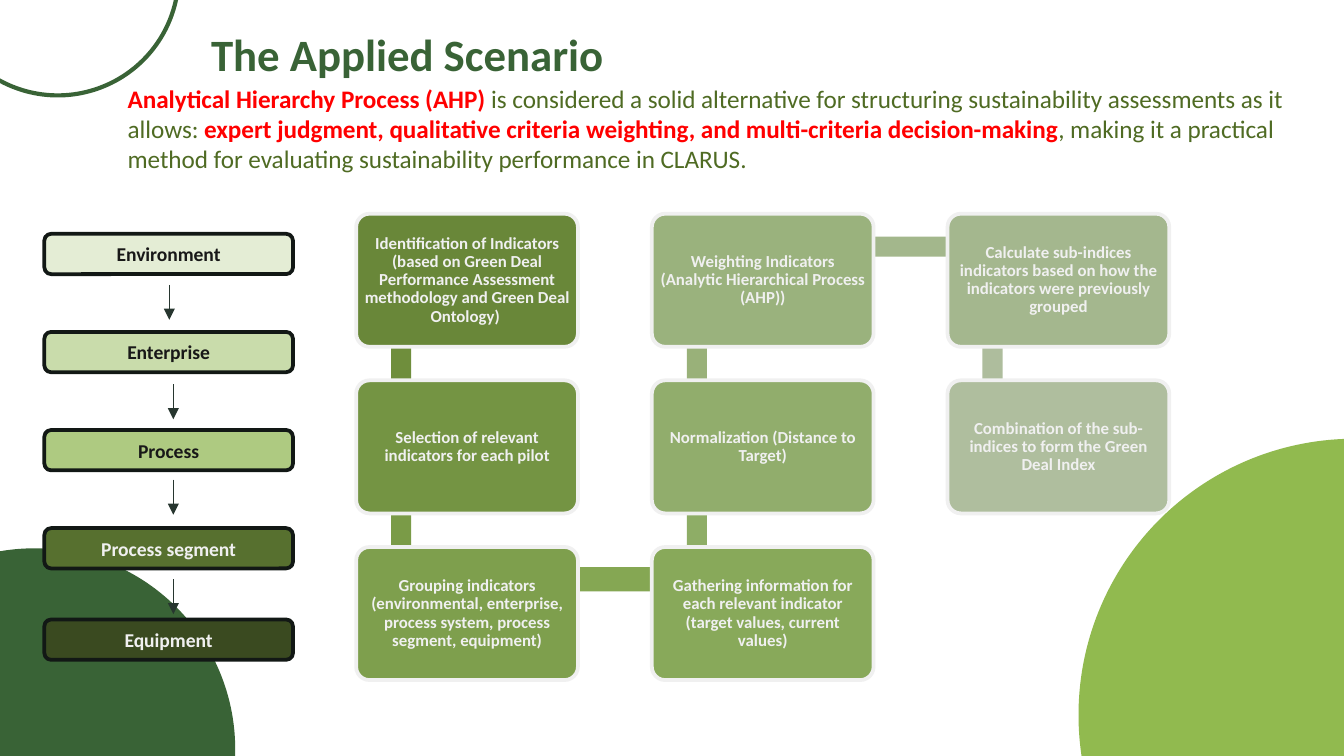
from lxml import etree
from pptx import Presentation
from pptx.dml.color import RGBColor
from pptx.enum.shapes import MSO_CONNECTOR, MSO_SHAPE as SHAPE
from pptx.enum.text import MSO_ANCHOR as ANCHOR, MSO_AUTO_SIZE, PP_ALIGN as ALIGN
from pptx.oxml.ns import qn
from pptx.util import Inches, Pt

CIRCLES = [
    (-0.47, -1.09, 1.8, None, "396336"),
    (8.04, 3.28, 4.08, "91BA4F", "91BA4F"),
    (-1.24, 4.08, 2.99, "396336", None),
]
INTRO = [
    ("Analytical Hierarchy Process (AHP)", "FF0000", True),
    ("\N{NO-BREAK SPACE}is considered a solid alternative for structuring sustainability "
     "assessments as it allows: ", "4F6B23", False),
    ("expert judgment, qualitative criteria weighting, and multi-criteria decision-making",
     "FF0000", True),
    (", making it a practical method for evaluating sustainability performance in CLARUS.",
     "4F6B23", False),
]
LEVELS = [
    ("Environment", 0, "E4EDD5", "181818"),
    ("Enterprise", 0.73, "C9DCAB", "181818"),
    ("Process", 1.46, "AECA81", "181818"),
    ("Process segment", 2.19, "57702F", "F0F0F0"),
    ("Equipment", 2.87, "3A4A20", "F0F0F0"),
]
ARROWS = [(0.93, 0.38), (0.96, 1.12), (0.96, 1.83), (0.96, 2.57)]
DOWN = (-0.28, 0.79, 1.23, 0.15, 90)
UP = (-0.28, -0.45, 1.23, 0.15, 270)
STEPS = [
    ("Identification of Indicators (based on Green Deal Performance Assessment "
     "methodology and Green Deal Ontology) ", 0, 0, "698739", DOWN, "6F8E3C"),
    ("Selection of relevant indicators for each pilot", 0, 1, "749443", DOWN, "7A9B47"),
    ("Grouping indicators (environmental, enterprise, process system, process segment, "
     "equipment)", 0, 2, "7E9F4D", (0.67, 0.15, 1.52, 0.18, 0), "85A753"),
    ("Gathering information for each relevant indicator (target values, current values)",
     1, 2, "88A95A", UP, "8EAD66"),
    ("Normalization (Distance to Target)", 1, 1, "91AD6C", UP, "99B179"),
    ("Weighting Indicators (Analytic Hierarchical Process (AHP))", 1, 0, "9AB27D",
     (0.34, 0.17, 2.19, 0.15, 0), "A3B78C"),
    ("Calculate sub-indices indicators based on how the indicators were previously grouped",
     2, 0, "A4B78E", DOWN, "AEBD9D"),
    ("Combination of the sub-indices to form the Green Deal Index", 2, 1, "AFBE9E", None, None),
]


def rgb(value):
    """Turn a hex string into a colour."""
    return RGBColor.from_string(value)


def add_run(p, text, size, color, bold=True):
    """Append one formatted run to a paragraph."""
    r = p.add_run()
    r.text = text
    r.font.name = "Calibri"
    r.font.size = Pt(size)
    r.font.bold = bold
    r.font.color.rgb = rgb(color)


def set_margins(tf, margin):
    """Give a text frame the same margin on all sides."""
    tf.margin_left = tf.margin_right = tf.margin_top = tf.margin_bottom = Inches(margin)


def add_shape(slide, kind, box, fill=None, line=None, width=2):
    """Add a flat shape with the given fill and line."""
    sp = slide.shapes.add_shape(kind, *map(Inches, box))
    sp.shadow.inherit = False
    if fill:
        sp.fill.solid()
        sp.fill.fore_color.rgb = rgb(fill)
    else:
        sp.fill.background()
    if line:
        sp.line.color.rgb = rgb(line)
        sp.line.width = Pt(width)
    else:
        sp.line.fill.background()
    return sp


def add_label(sp, text, size, color):
    """Centre a bold label in a shape and return its text frame."""
    tf = sp.text_frame
    tf.word_wrap = True
    tf.vertical_anchor = ANCHOR.MIDDLE
    p = tf.paragraphs[0]
    p.alignment = ALIGN.CENTER
    add_run(p, text, size, color)
    return tf


def place_text(sp, box):
    """Move a text placeholder into a box and return its first paragraph."""
    sp.left, sp.top, sp.width, sp.height = map(Inches, box)
    tf = sp.text_frame
    tf.word_wrap = True
    tf.auto_size = MSO_AUTO_SIZE.NONE
    tf.vertical_anchor = ANCHOR.TOP
    set_margins(tf, 0.1)
    p = tf.paragraphs[0]
    p.alignment = ALIGN.LEFT
    p.space_before = Pt(0)
    p.line_spacing = 1.0
    return p


def add_circles(slide):
    """Draw the corner circles behind everything else."""
    tree = slide.shapes.element
    for i, (x, y, d, fill, line) in enumerate(CIRCLES):
        sp = add_shape(slide, SHAPE.OVAL, (x, y, d, d), fill, line, 2.25)
        tree.insert(2 + i, sp.element)


def add_heading(slide, x, y):
    """Fill the title and the introduction below it."""
    title, body = slide.placeholders
    p = place_text(title, (x + 0.77, y, 8.19, 0.44))
    add_run(p, "The Applied Scenario", 24, "396336")
    p = place_text(body, (x, y + 0.42, 9.1, 0.79))
    pPr = p._p.get_or_add_pPr()
    pPr.set("marL", str(Inches(0.15)))
    pPr.set("indent", "0")
    etree.SubElement(pPr, qn("a:buNone"))
    for text, color, bold in INTRO:
        add_run(p, text, 13.5, color, bold)


def add_arrow(slide, x, y, length):
    """Draw a thin arrow pointing down."""
    line = slide.shapes.add_connector(
        MSO_CONNECTOR.STRAIGHT, *map(Inches, (x, y, x, y + length)))
    line.line.color.rgb = rgb("27362F")
    line.line.width = Pt(0.75)
    etree.SubElement(line.line._get_or_add_ln(), qn("a:tailEnd"), type="triangle")
    etree.SubElement(line._element.spPr, qn("a:effectLst"))


def add_hierarchy(slide, x, y):
    """Stack the levels from environment to equipment, with arrows between."""
    for text, dy, fill, color in LEVELS:
        sp = add_shape(slide, SHAPE.ROUNDED_RECTANGLE, (x, y + dy, 1.85, 0.3), fill, "121815")
        add_label(sp, text, 10.5, color)
    for dx, dy in ARROWS:
        add_arrow(slide, x + dx, y + dy, 0.26)


def add_process(slide, x, y):
    """Lay the steps out on a snaking grid, joined by bars."""
    for text, col, row, fill, bar, bar_fill in STEPS:
        left, top = x + 2.2 * col, y + 1.24 * row
        if bar:
            dx, dy, w, h, angle = bar
            sp = add_shape(slide, SHAPE.RECTANGLE, (left + dx, top + dy, w, h), bar_fill)
            sp.rotation = angle
        sp = add_shape(slide, SHAPE.ROUNDED_RECTANGLE, (left, top, 1.65, 0.99), fill, "F0F0F0")
        sp.adjustments[0] = 0.1
        box = (left + 0.03, top + 0.03, 1.59, 0.93)
        tf = add_label(slide.shapes.add_textbox(*map(Inches, box)), text, 9, "F0F0F0")
        set_margins(tf, 0.03)
        tf.paragraphs[0].line_spacing = 0.9


def main():
    """Build the slide and save it."""
    prs = Presentation()
    prs.slide_width = Inches(10)
    prs.slide_height = prs.slide_width * 9 // 16
    slide = prs.slides.add_slide(prs.slide_layouts[1])
    add_circles(slide)
    add_heading(slide, 0.7, 0.1)
    add_hierarchy(slide, 0.33, 1.74)
    add_process(slide, 2.65, 1.59)
    prs.save("out.pptx")


if __name__ == "__main__":
    main()
